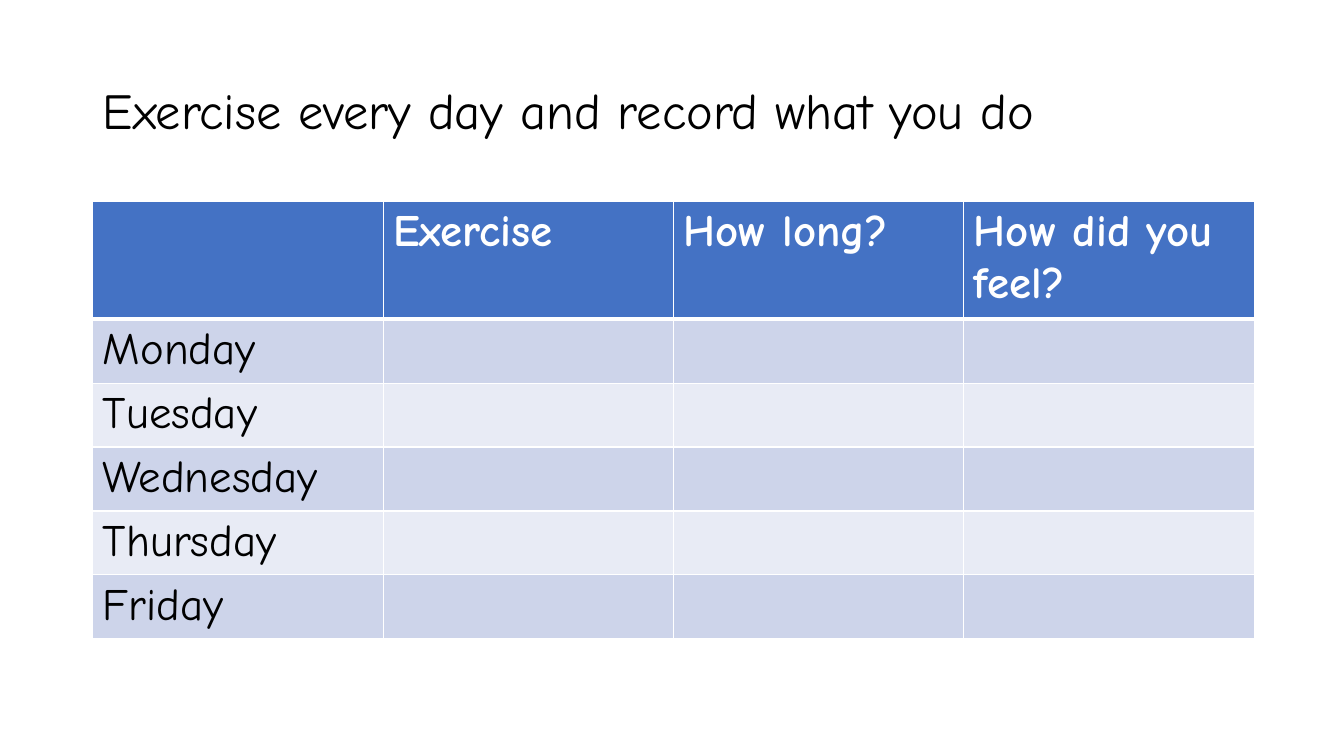
"""Build a weekly exercise record slide with a title and a table."""
from dataclasses import dataclass

from lxml import etree
from pptx import Presentation
from pptx.dml.color import RGBColor
from pptx.enum.text import MSO_ANCHOR
from pptx.oxml.ns import qn
from pptx.util import Inches, Pt

MIDDLE = MSO_ANCHOR.MIDDLE


@dataclass(frozen=True)
class Theme:
    font: str = "Comic Neue"
    title_size: int = 36
    table_size: int = 32
    text: str = "000000"
    white: str = "FFFFFF"
    header: str = "4472C4"
    bands: tuple = ("CDD4EA", "E8EBF5")
    thin: int = 1
    thick: int = 3


theme = Theme()


def write(paragraph, text, size, color, bold=False):
    run = paragraph.add_run()
    run.text = text
    formats = {"name": theme.font, "size": Pt(size), "bold": bold}
    for name, value in formats.items():
        setattr(run.font, name, value)
    run.font.color.rgb = RGBColor.from_string(color)


def add_border(cell, side, width):
    properties = cell._tc.get_or_add_tcPr()
    line = etree.SubElement(properties, qn(f"a:ln{side}"), w=str(Pt(width)))
    fill = etree.SubElement(line, qn("a:solidFill"))
    etree.SubElement(fill, qn("a:srgbClr"), val=theme.white)


presentation = Presentation()
presentation.slide_width = Inches(13.33)
presentation.slide_height = Inches(7.5)
slide = presentation.slides.add_slide(presentation.slide_layouts[6])

title = slide.shapes.add_textbox(Inches(0.92), Inches(0.4), Inches(11.5), Inches(1.45))
title_frame = title.text_frame
title_frame.word_wrap = True
title_frame.vertical_anchor = MIDDLE
title_paragraph = title_frame.paragraphs[0]
title_paragraph.line_spacing = 0.9
write(title_paragraph, "Exercise every day and record what you do", theme.title_size, theme.text)

headings = ["", "Exercise", "How long?", "How did you feel?"]
days = ["Monday", "Tuesday", "Wednesday", "Thursday", "Friday"]
rows = [headings] + [[day, "", "", ""] for day in days]

column_width = Inches(2.88)
row_height = Inches(0.41)
table = slide.shapes.add_table(
    len(rows), len(headings), Inches(0.92), Inches(2),
    column_width * len(headings), row_height * len(rows),
).table
for column in table.columns:
    column.width = column_width
for row in table.rows:
    row.height = row_height

for row_index, labels in enumerate(rows):
    is_header = row_index == 0
    fill_color = theme.header if is_header else theme.bands[(row_index - 1) % 2]
    text_color = theme.white if is_header else theme.text
    border_widths = {
        "L": theme.thin,
        "R": theme.thin,
        "T": theme.thick if row_index == 1 else theme.thin,
        "B": theme.thick if is_header else theme.thin,
    }
    for column_index, label in enumerate(labels):
        cell = table.cell(row_index, column_index)
        for side, width in border_widths.items():
            add_border(cell, side, width)
        cell.fill.solid()
        cell.fill.fore_color.rgb = RGBColor.from_string(fill_color)
        if label:
            write(cell.text_frame.paragraphs[0], label, theme.table_size, text_color, is_header)

presentation.save("out.pptx")
